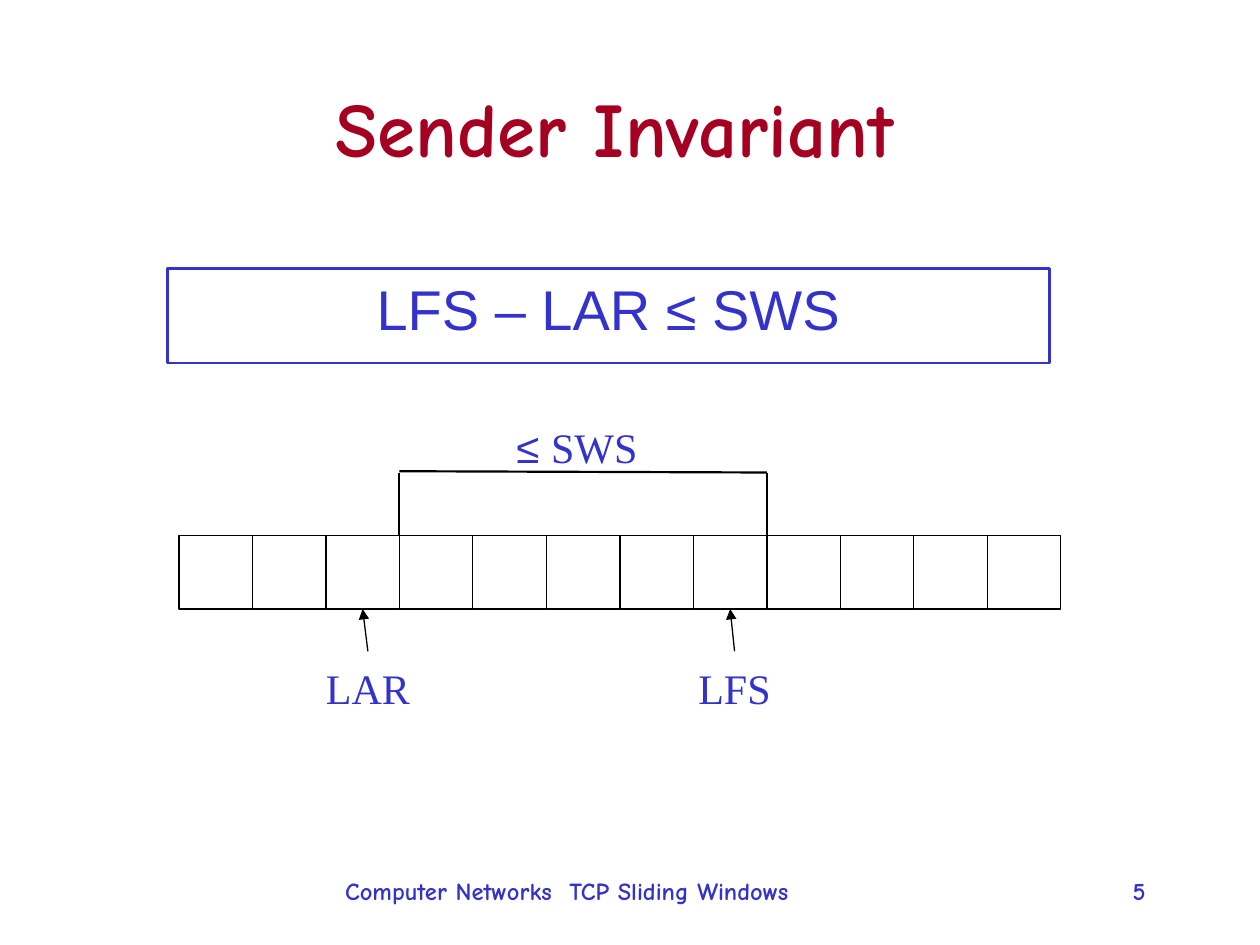
from lxml import etree
from pptx import Presentation
from pptx.dml.color import RGBColor
from pptx.enum import shapes, text
from pptx.oxml.ns import qn
from pptx.util import Inches, Pt

RED = RGBColor(0xA5, 0x00, 0x21)
BLUE = RGBColor(0x33, 0x33, 0xCC)
BLACK = RGBColor(0, 0, 0)
WHITE = RGBColor(0xFF, 0xFF, 0xFF)
CENTER = text.PP_ALIGN.CENTER
MIDDLE = text.MSO_ANCHOR.MIDDLE

deck = Presentation()
deck.slide_width, deck.slide_height = Inches(10), Inches(7.5)
slide = deck.slides.add_slide(deck.slide_layouts[6])


def write(holder, wording, size, font, color, align, anchor=text.MSO_ANCHOR.TOP, bold=False, wrap=True):
    frame = holder.text_frame
    frame.text = wording
    frame.word_wrap = wrap
    frame.vertical_anchor = anchor
    frame.paragraphs[0].alignment = align
    for run in frame.paragraphs[0].runs:
        run.font.size = Pt(size)
        run.font.name = font
        run.font.bold = bold
        run.font.color.rgb = color


def draw_line(x1, y1, x2, y2, width):
    line = slide.shapes.add_connector(
        shapes.MSO_CONNECTOR.STRAIGHT, Inches(x1), Inches(y1), Inches(x2), Inches(y2))
    line.line.color.rgb = BLACK
    line.line.width = Pt(width)
    etree.SubElement(line.line._get_or_add_ln().getparent(), qn("a:effectLst"))
    return line


title = slide.shapes.add_textbox(Inches(0.52), Inches(0.34), Inches(8.72), Inches(1.33))
write(title, "Sender Invariant", 44, "Comic Neue", RED, CENTER, MIDDLE, bold=True)

invariant = slide.shapes.add_shape(
    shapes.MSO_SHAPE.RECTANGLE, Inches(1.33), Inches(2.13), Inches(7), Inches(0.75))
invariant.shadow.inherit = False
invariant.fill.background()
invariant.line.color.rgb = BLUE
invariant.line.width = Pt(1.5)
write(invariant, "LFS – LAR ≤ SWS", 32, "Arial", BLUE, CENTER)

side = 7 / 12
row_left, row_top = 1.42, 4.25
cells = []
for index in range(12):
    cell = slide.shapes.add_shape(
        shapes.MSO_SHAPE.RECTANGLE, Inches(row_left + index * side), Inches(row_top),
        Inches(side), Inches(side))
    cell.shadow.inherit = False
    cell.fill.solid()
    cell.fill.fore_color.rgb = WHITE
    cell.line.color.rgb = BLACK
    cell.line.width = Pt(0.75)
    cells.append(cell)

labels = {}
for wording, left, top in (("LAR", 2.42, 5.17), ("LFS", 5.33, 5.17), ("≤ SWS", 4.08, 3.25)):
    label = slide.shapes.add_shape(
        shapes.MSO_SHAPE.RECTANGLE, Inches(left), Inches(top), Inches(1), Inches(side))
    label.shadow.inherit = False
    label.fill.solid()
    label.fill.fore_color.rgb = WHITE
    label.line.color.rgb = WHITE
    label.line.width = Pt(0.75)
    write(label, wording, 24, "Times New Roman", BLUE, CENTER, MIDDLE, wrap=False)
    labels[wording] = label

window_size = labels["≤ SWS"].text_frame.paragraphs[0]
window_size.runs[0].text = "≤ "
window_size.runs[0].font.name = "Arial"
sws = window_size.add_run()
sws.text = "SWS"
sws.font.size = Pt(24)
sws.font.name = "Times New Roman"
sws.font.color.rgb = BLUE

window_left, window_right = row_left + 3 * side, row_left + 8 * side
draw_line(window_right, 3.75, window_right, row_top, 0.75)
draw_line(window_left, 3.75, window_left, row_top, 1.25)
draw_line(window_left, 3.74, window_right, 3.75, 1.25)

for wording, index in (("LAR", 2), ("LFS", 7)):
    pointer = draw_line(0, 0, 1, 1, 0.75)
    pointer.begin_connect(labels[wording], 0)
    pointer.end_connect(cells[index], 2)
    etree.SubElement(pointer.line._get_or_add_ln(), qn("a:tailEnd"), type="triangle")

footer = slide.shapes.add_textbox(Inches(2.64), Inches(6.9), Inches(5.28), Inches(0.39))
write(footer, "Computer Networks  TCP Sliding Windows", 14, "Comic Neue", BLUE,
      text.PP_ALIGN.LEFT, bold=True)
page_number = slide.shapes.add_textbox(Inches(7.44), Inches(6.9), Inches(1.75), Inches(0.5))
write(page_number, "5", 14, "Comic Neue", BLUE, text.PP_ALIGN.RIGHT, bold=True)

deck.save("out.pptx")
